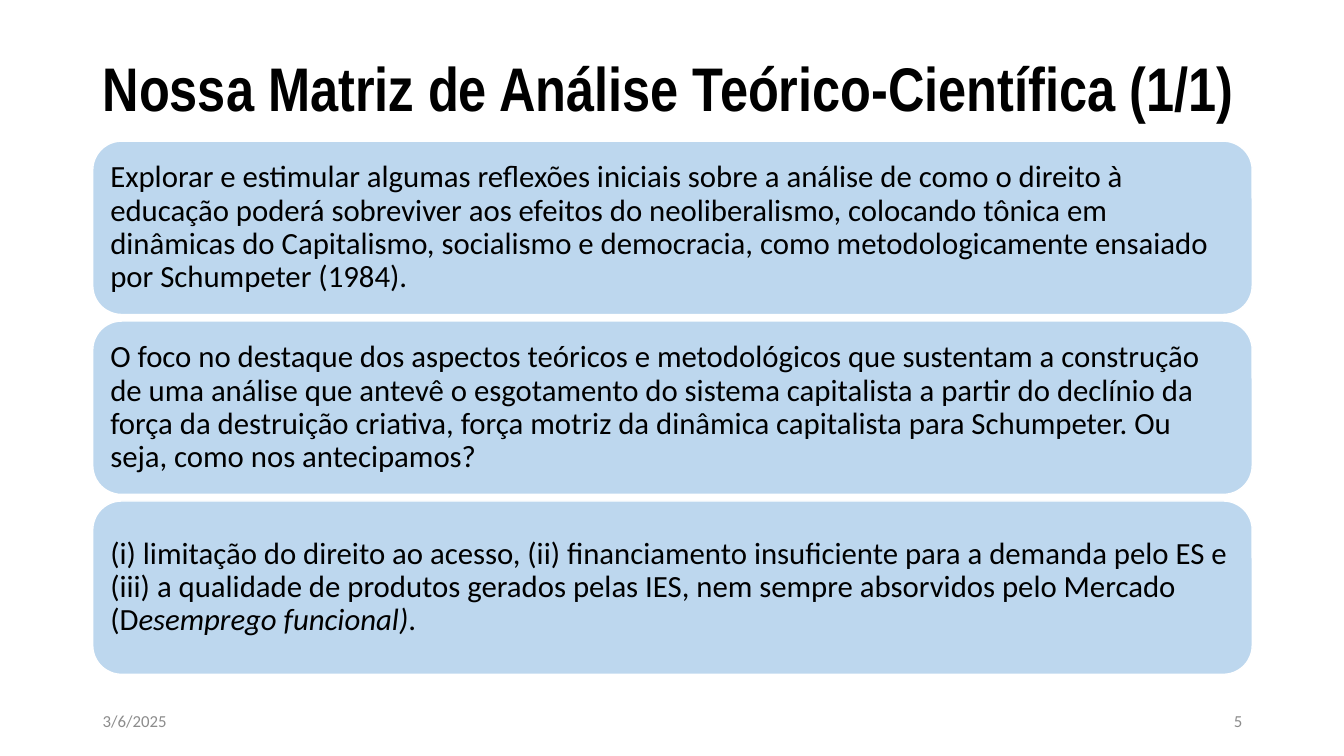
from pptx import Presentation
from pptx.dml.color import RGBColor
from pptx.enum.shapes import MSO_SHAPE
from pptx.enum.text import MSO_ANCHOR, PP_ALIGN
from pptx.util import Inches, Pt

ROUND = MSO_SHAPE.ROUNDED_RECTANGLE
MIDDLE = MSO_ANCHOR.MIDDLE
LEFT, RIGHT = PP_ALIGN.LEFT, PP_ALIGN.RIGHT

EDGE, WIDTH = 0.92, 11.5


def color(code):
    return RGBColor.from_string(code)


def write(shape, runs, look, ink="000000", align=LEFT, space=1.0):
    """Fill a shape with one paragraph of (text, extra format) runs."""
    frame = shape.text_frame
    frame.word_wrap = True
    frame.vertical_anchor = MIDDLE
    para = frame.paragraphs[0]
    para.alignment = align
    para.line_spacing = space
    for text, extra in runs:
        run = para.add_run()
        run.text = text
        run.font.color.rgb = color(ink)
        for name, value in {**look, **extra}.items():
            setattr(run.font, name, value)


deck = Presentation()
deck.slide_width, deck.slide_height = Inches(13.33), Inches(7.5)
slide = deck.slides.add_slide(deck.slide_layouts[6])
shapes = slide.shapes

# Title
title = shapes.add_textbox(Inches(EDGE), Inches(0.4), Inches(WIDTH), Inches(1.01))
write(title, [("Nossa Matriz de Análise Teórico-Científica (1/1)", {})],
      {"name": "Arial Narrow", "size": Pt(44), "bold": True}, space=0.9)

# Three stacked panels
panels = [
    [("Explorar e estimular algumas reflexões iniciais sobre a análise de como "
      "o direito à educação poderá sobreviver aos efeitos do neoliberalismo, "
      "colocando tônica em dinâmicas do Capitalismo, socialismo e democracia, "
      "como metodologicamente ensaiado por Schumpeter (1984).", {})],
    [("O foco no destaque dos aspectos teóricos e metodológicos que sustentam "
      "a construção de uma análise que antevê o esgotamento do sistema "
      "capitalista a partir do declínio da força da destruição criativa, força "
      "motriz da dinâmica capitalista para Schumpeter. Ou seja, como nos "
      "antecipamos?", {})],
    [("(i) limitação do direito ao acesso, (ii) financiamento insuficiente para "
      "a demanda pelo ES e (iii) a qualidade de produtos gerados pelas IES, nem "
      "sempre absorvidos pelo Mercado (D", {}),
     ("esemprego funcional)", {"italic": True}),
     (".", {})],
]
TOP, HEIGHT, STEP = 1.4, 1.72, 1.785
for row, runs in enumerate(panels):
    panel = shapes.add_shape(ROUND, Inches(EDGE), Inches(TOP + row * STEP),
                             Inches(WIDTH), Inches(HEIGHT))
    panel.shadow.inherit = False
    panel.fill.solid()
    panel.fill.fore_color.rgb = color("BDD7EE")
    panel.line.color.rgb = color("FFFFFF")
    panel.line.width = Pt(1)
    for side in ("left", "top", "right", "bottom"):
        setattr(panel.text_frame, f"margin_{side}", Inches(0.09))
    write(panel, runs, {"name": "Calibri", "size": Pt(22)}, space=0.9)

# Footer: date and page number
SPAN = 3
for left, text, align in [(EDGE, "3/6/2025", LEFT),
                          (EDGE + WIDTH - SPAN, "5", RIGHT)]:
    note = shapes.add_textbox(Inches(left), Inches(6.95), Inches(SPAN), Inches(0.4))
    write(note, [(text, {})], {"name": "Calibri", "size": Pt(12)}, "8C8C8C", align)

deck.save("out.pptx")
